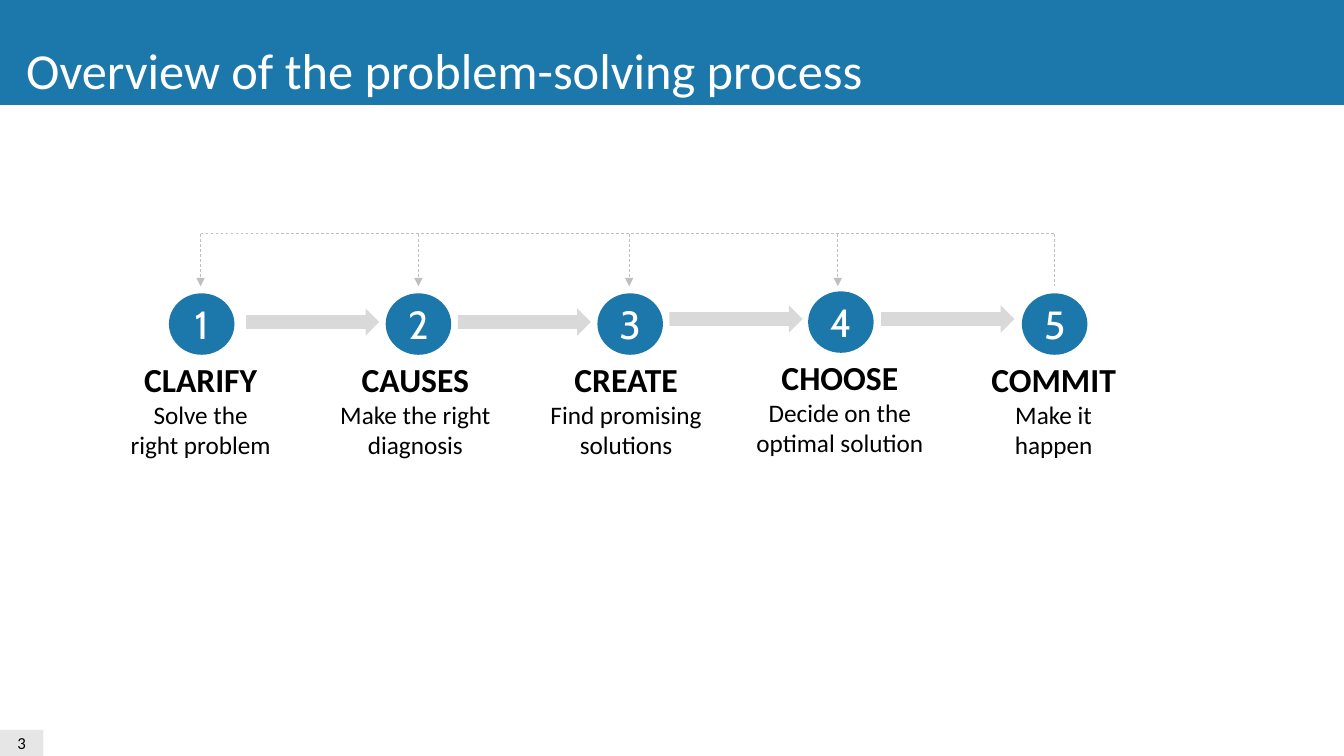
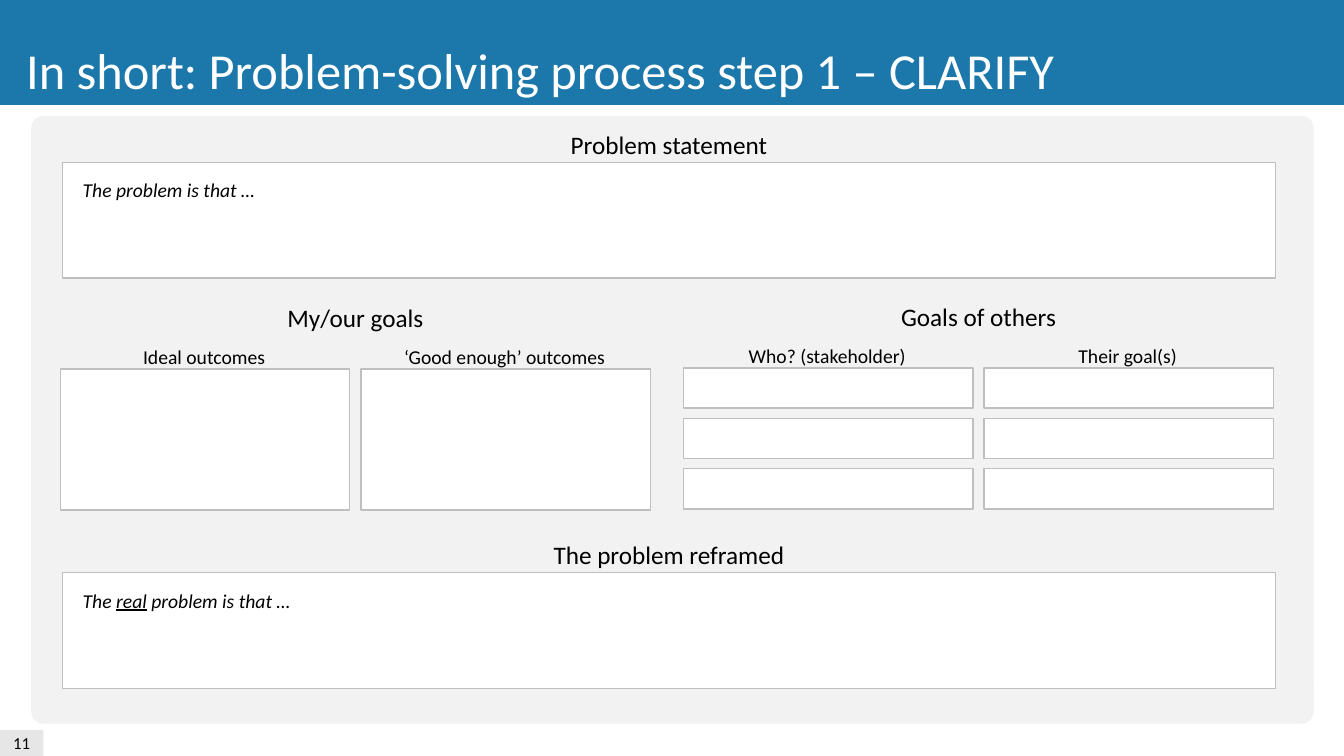
from dataclasses import dataclass

from pptx import Presentation
from pptx import util as u
from pptx.dml.color import RGBColor
from pptx.enum import dml, shapes, text
from pptx.oxml import ns
from lxml import etree

Inches = u.Inches


@dataclass(frozen=True)
class Theme:
    blue: str = "1C78AB"
    white: str = "FFFFFF"
    black: str = "000000"
    panel: str = "F2F2F2"
    page: str = "E7E6E6"
    arrow: str = "D9D9D9"
    outline: str = "BFBFBF"
    font: str = "Calibri"
    number_font: str = "Cabin"
    title_size: int = 36
    number_size: int = 28
    name_size: int = 24
    heading_size: int = 18
    small_size: int = 14
    page_size: int = 12


@dataclass(frozen=True)
class Box:
    left: float
    top: float
    width: float
    height: float

    def inches(self):
        return [Inches(n) for n in (self.left, self.top, self.width, self.height)]


@dataclass(frozen=True)
class Step:
    name: str
    caption: str
    circle_x: float
    text_x: float
    drop_x: float
    top: float


THEME = Theme()
SLIDE_WIDTH, SLIDE_HEIGHT = 13.33, 7.5
CENTER, LEFT = text.PP_ALIGN.CENTER, text.PP_ALIGN.LEFT
TOP, MIDDLE, BOTTOM = text.MSO_ANCHOR.TOP, text.MSO_ANCHOR.MIDDLE, text.MSO_ANCHOR.BOTTOM
RECTANGLE = shapes.MSO_SHAPE.RECTANGLE

STEPS = [
    Step("CLARIFY", "Solve the\nright problem", 2.0, 1.99, 1.99, 2.91),
    Step("CAUSES", "Make the right\ndiagnosis", 4.15, 4.12, 4.15, 2.91),
    Step("CREATE", "Find promising\nsolutions", 6.25, 6.21, 6.24, 2.91),
    Step("CHOOSE", "Decide on the\noptimal solution", 8.34, 8.33, 8.31, 2.89),
    Step("COMMIT", "Make it\nhappen", 10.46, 10.45, 10.46, 2.91),
]


def format_text(shape, size, color=THEME.black, font=THEME.font, align=CENTER,
                anchor=MIDDLE, insets=(0, 0, 0, 0), bold=False, italic=False):
    frame = shape.text_frame
    frame.word_wrap = True
    frame.auto_size = text.MSO_AUTO_SIZE.NONE
    frame.vertical_anchor = anchor
    frame.margin_left, frame.margin_top, frame.margin_right, frame.margin_bottom = map(Inches, insets)
    for paragraph in frame.paragraphs:
        paragraph.alignment = align
        for run in paragraph.runs:
            run.font.name = font
            run.font.size = u.Pt(size)
            run.font.bold = bold
            run.font.italic = italic
            run.font.color.rgb = RGBColor.from_string(color)


def add_shape(slide, kind, box, fill, outline=None):
    shape = slide.shapes.add_shape(kind, *box.inches())
    shape.shadow.inherit = False
    shape.fill.solid()
    shape.fill.fore_color.rgb = RGBColor.from_string(fill)
    if outline:
        shape.line.color.rgb = RGBColor.from_string(outline)
        shape.line.width = u.Pt(1)
    else:
        shape.line.fill.background()
    return shape


def add_label(slide, box, words, size, bold=False):
    shape = slide.shapes.add_textbox(*box.inches())
    shape.text_frame.text = words
    format_text(shape, size, anchor=TOP, insets=(0, 0.05, 0, 0.05), bold=bold)


def add_dashed_line(slide, start, end, arrow=False):
    connector = slide.shapes.add_connector(
        shapes.MSO_CONNECTOR.STRAIGHT, *map(Inches, (*start, *end)))
    connector.line.color.rgb = RGBColor.from_string(THEME.outline)
    connector.line.width = u.Pt(0.5)
    connector.line.dash_style = dml.MSO_LINE.DASH
    if arrow:
        etree.SubElement(connector.line._get_or_add_ln(), ns.qn("a:tailEnd"), type="triangle")
    etree.SubElement(connector._element.spPr, ns.qn("a:effectLst"))


def add_base_slide(presentation, title, page_number):
    slide = presentation.slides.add_slide(presentation.slide_layouts.get_by_name("Title Only"))
    band = slide.shapes.title
    band.left, band.top, band.width, band.height = Box(0, 0, SLIDE_WIDTH, 1.04).inches()
    band.fill.solid()
    band.fill.fore_color.rgb = RGBColor.from_string(THEME.blue)
    band.text_frame.text = title
    format_text(band, THEME.title_size, THEME.white, align=LEFT, anchor=BOTTOM,
                insets=(0.26, 0, 0.1, 0.05))
    page = add_shape(slide, RECTANGLE, Box(0, 7.24, 0.43, 0.26), THEME.page)
    page.text_frame.text = str(page_number)
    format_text(page, THEME.page_size)
    return slide


def add_step(slide, number, step):
    width, height = 0.65, 0.61
    circle = add_shape(slide, shapes.MSO_SHAPE.OVAL,
                       Box(step.circle_x - width / 2, step.top, width, height), THEME.blue)
    circle.text_frame.text = str(number)
    format_text(circle, THEME.number_size, THEME.white, THEME.number_font)
    text_left = step.text_x - 1
    add_label(slide, Box(text_left, step.top + 0.6, 2, 0.5), step.name, THEME.name_size, bold=True)
    add_label(slide, Box(text_left, step.top + 1.0, 2, 0.71), step.caption, THEME.heading_size)


def add_feedback_loop(slide, steps, top, bottom):
    for step in steps:
        add_dashed_line(slide, (step.drop_x, top), (step.drop_x, bottom), arrow=step is not steps[-1])
    add_dashed_line(slide, (steps[0].drop_x, top), (steps[-1].drop_x, top))


def add_process(slide, steps):
    for number, step in enumerate(steps, 1):
        add_step(slide, number, step)
    for index in range(len(steps) - 1):
        top = 3.06 if index < 2 else 3.03
        add_shape(slide, shapes.MSO_SHAPE.RIGHT_ARROW,
                  Box(2.44 + 2.1 * index, top, 1.32, 0.27), THEME.arrow)
    add_feedback_loop(slide, steps, 2.32, 2.84)


def add_field(slide, box):
    return add_shape(slide, RECTANGLE, box, THEME.white, THEME.outline)


def add_statement(slide, box, heading, parts):
    heading_height = 0.38
    add_label(slide, Box(box.left, box.top, box.width, 0.4), heading, THEME.heading_size)
    field = add_field(slide, Box(box.left, box.top + heading_height, box.width,
                                 box.height - heading_height))
    paragraph = field.text_frame.paragraphs[0]
    for words, underlined in parts:
        run = paragraph.add_run()
        run.text = words
        run.font.underline = underlined
    format_text(field, THEME.small_size, align=LEFT, anchor=TOP,
                insets=(0.2, 0.16, 0.1, 0.05), italic=True)


def add_goals(slide, box, heading, columns, rows):
    column_gap, row_gap, header_height = 0.11, 0.1, 0.71
    width = (box.width - column_gap * (len(columns) - 1)) / len(columns)
    height = (box.height - header_height - row_gap * (rows - 1)) / rows
    add_label(slide, Box(box.left, box.top, box.width, 0.4), heading, THEME.heading_size)
    for column, name in enumerate(columns):
        left = box.left + column * (width + column_gap)
        add_label(slide, Box(left - 0.01, box.top + 0.42, width, 0.34), name, THEME.small_size)
        for row in range(rows):
            top = box.top + header_height + row * (height + row_gap)
            add_field(slide, Box(left, top, width, height))


def build_overview(presentation):
    slide = add_base_slide(presentation, "Overview of the problem-solving process", 3)
    add_process(slide, STEPS)


def build_clarify(presentation):
    slide = add_base_slide(presentation, "In short: Problem-solving process step 1 – CLARIFY", 11)
    panel = add_shape(slide, shapes.MSO_SHAPE.ROUNDED_RECTANGLE,
                      Box(0.31, 1.15, 12.72, 6.03), THEME.panel)
    panel.adjustments[0] = 0.02
    add_statement(slide, Box(0.62, 1.23, 12.03, 1.53), "Problem statement",
                  [("The problem is that …", False)])
    add_goals(slide, Box(0.6, 2.95, 5.85, 2.11), "My/our goals",
              ["Ideal outcomes", "‘Good enough’ outcomes"], 1)
    add_goals(slide, Box(6.78, 2.94, 5.85, 2.11), "Goals of others",
              ["Who? (stakeholder)", "Their goal(s)"], 3)
    add_statement(slide, Box(0.62, 5.3, 12.03, 1.53), "The problem reframed",
                  [("The ", False), ("real", True), (" problem is that …", False)])


def main():
    presentation = Presentation()
    presentation.slide_width = Inches(SLIDE_WIDTH)
    presentation.slide_height = Inches(SLIDE_HEIGHT)
    build_overview(presentation)
    build_clarify(presentation)
    presentation.save("out.pptx")


if __name__ == "__main__":
    main()
